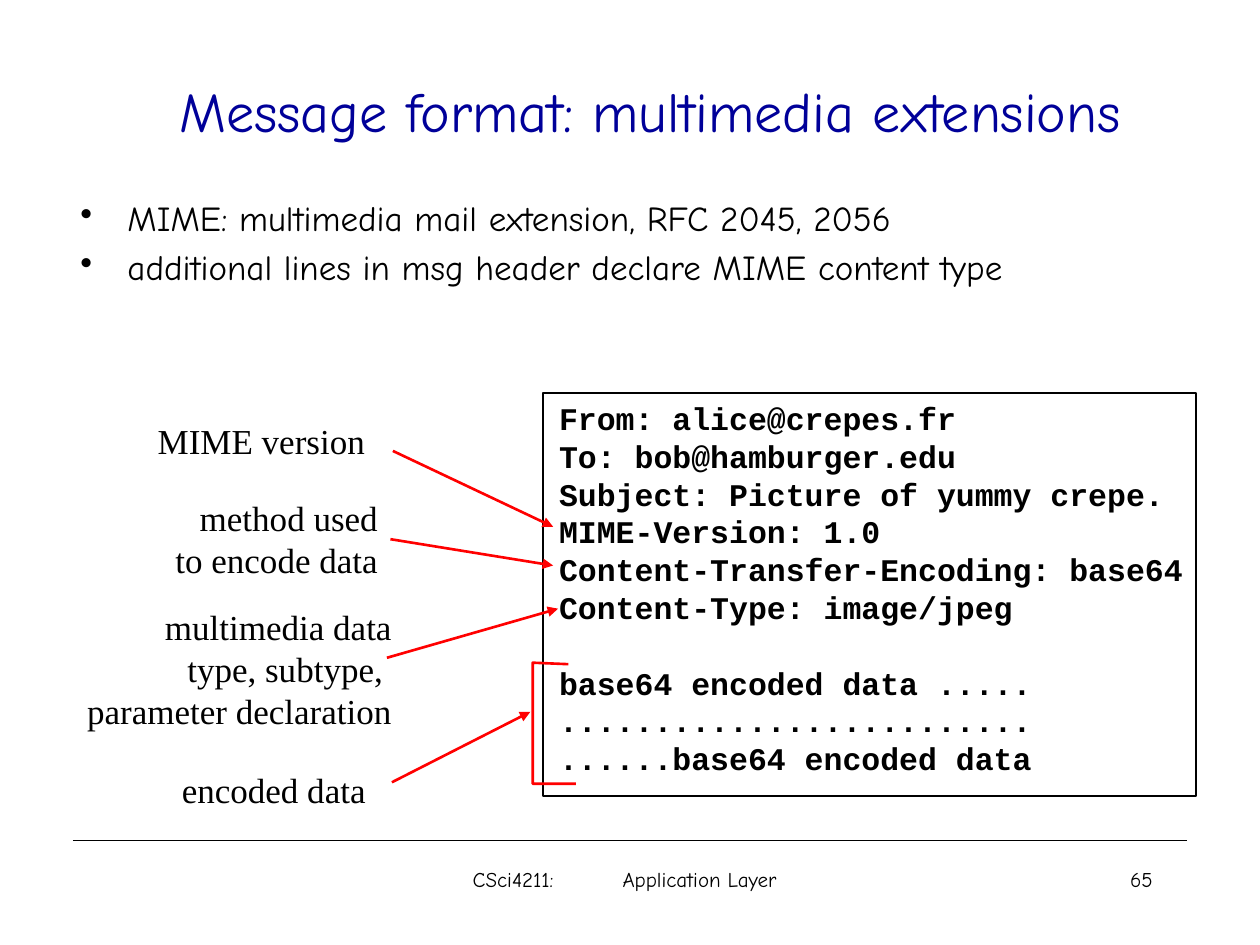
from lxml.etree import SubElement
from pptx import Presentation
from pptx.dml.color import RGBColor
from pptx.enum.shapes import MSO_CONNECTOR, MSO_SHAPE
from pptx.enum.text import MSO_ANCHOR, PP_ALIGN
from pptx.oxml.ns import qn
from pptx.util import Cm, Pt

BLACK = RGBColor(0x00, 0x00, 0x00)
NAVY = RGBColor(0x00, 0x00, 0x99)
RED = RGBColor(0xFF, 0x00, 0x00)

COMIC = "Comic Neue"
COURIER = "Courier New"
TIMES = "Times New Roman"

BULLETS = [
    "MIME: multimedia mail extension, RFC 2045, 2056",
    "additional lines in msg header declare MIME content type",
]
MAIL_HEADER = [
    "From: alice@crepes.fr",
    "To: bob@hamburger.edu",
    "Subject: Picture of yummy crepe.",
    "MIME-Version: 1.0",
    "Content-Transfer-Encoding: base64",
    "Content-Type: image/jpeg",
]
MAIL_BODY = [
    "base64 encoded data .....",
    ".........................",
    "......base64 encoded data",
]
# Each label: lines, box (left, top, width, height), alignment, arrow (x1, y1, x2, y2)
LABELS = [
    (["MIME version"], (2.69, 8.33, 5.16, 1.09), PP_ALIGN.CENTER,
     (7.92, 9.09, 11.15, 10.62)),
    (["method used", "to encode data"], (2.49, 9.88, 5.38, 1.96), PP_ALIGN.RIGHT,
     (7.87, 10.87, 11.15, 11.4)),
    (["multimedia data", "type, subtype, ", "parameter declaration"],
     (0.3, 12.09, 7.85, 2.79), PP_ALIGN.RIGHT, (7.8, 13.26, 11.25, 12.27)),
    (["encoded data"], (3.07, 15.37, 4.9, 1.09), PP_ALIGN.CENTER,
     (7.9, 15.77, 10.69, 14.35)),
]
BRACKET = [(11.46, 13.39), (10.74, 13.36), (10.74, 15.8), (11.61, 15.8)]


def add_text(slide, box, lines, font, size, color=BLACK, align=PP_ALIGN.LEFT,
             bold=False, wrap=True):
    """Add a text box with one paragraph per line and return its frame."""
    frame = slide.shapes.add_textbox(*map(Cm, box)).text_frame
    frame.word_wrap = wrap
    frame.text = "\n".join(lines)
    for paragraph in frame.paragraphs:
        paragraph.alignment = align
        paragraph.line_spacing = Pt(size * 1.2)
        paragraph.font.name = font
        paragraph.font.size = Pt(size)
        paragraph.font.bold = bold
        paragraph.font.color.rgb = color
    return frame


def add_bullet(paragraph, indent):
    properties = paragraph._p.get_or_add_pPr()
    properties.set("marL", str(indent))
    properties.set("indent", str(-indent))
    bullet = SubElement(properties, qn("a:buChar"))
    bullet.set("char", "•")
    properties.find(qn("a:defRPr")).addprevious(bullet)


def add_tab_stop(paragraph, position):
    properties = paragraph._p.get_or_add_pPr()
    tabs = SubElement(properties, qn("a:tabLst"))
    SubElement(tabs, qn("a:tab"), pos=str(position), algn="l")
    properties.find(qn("a:defRPr")).addprevious(tabs)


def add_line(slide, ends, color, width, arrow=False):
    line = slide.shapes.add_connector(MSO_CONNECTOR.STRAIGHT, *map(Cm, ends))
    line.line.color.rgb = color
    line.line.width = Pt(width)
    if arrow:
        SubElement(line.line._get_or_add_ln(), qn("a:tailEnd"), type="triangle")
    SubElement(line._element.spPr, qn("a:effectLst"))


def style_outline(shape, color, width):
    shape.shadow.inherit = False
    shape.fill.background()
    shape.line.color.rgb = color
    shape.line.width = Pt(width)


def add_bracket(slide, points):
    corners = [(Cm(x), Cm(y)) for x, y in points]
    builder = slide.shapes.build_freeform(*corners[0])
    builder.add_line_segments(corners[1:], close=False)
    style_outline(builder.convert_to_shape(), RED, 1.5)


def add_footer(slide):
    add_line(slide, (1.47, 16.94, 23.93, 16.94), BLACK, 0.75)
    course = add_text(slide, (8.46, 17.35, 8.26, 1.27),
                      ["CSci4211:\tApplication Layer"], COMIC, 12)
    course.margin_left = Cm(1.07)
    add_tab_stop(course.paragraphs[0], Cm(3.02))
    add_text(slide, (18.21, 17.35, 5.28, 1.27), ["65"], COMIC, 12,
             align=PP_ALIGN.RIGHT)


def add_mail(slide):
    frame = add_text(slide, (11.02, 7.92, 13.82, 8.64), MAIL_HEADER + MAIL_BODY,
                     COURIER, 18, bold=True)
    # One line of space between header and body
    frame.paragraphs[len(MAIL_HEADER)].space_before = Pt(21.6)
    border = slide.shapes.add_shape(
        MSO_SHAPE.RECTANGLE, Cm(10.95), Cm(7.92), Cm(13.16), Cm(8.13))
    style_outline(border, BLACK, 1)


def main():
    presentation = Presentation()
    presentation.slide_width = Cm(25.4)
    presentation.slide_height = Cm(19.05)
    slide = presentation.slides.add_slide(presentation.slide_layouts[6])

    add_footer(slide)

    # Title and bullets
    title = add_text(slide, (1.47, 0.64, 23.29, 3.18),
                     ["Message format: multimedia extensions"], COMIC, 32,
                     NAVY, PP_ALIGN.CENTER)
    title.vertical_anchor = MSO_ANCHOR.MIDDLE
    body = add_text(slide, (1.37, 3.84, 20.35, 12.9), BULLETS, COMIC, 20)
    for paragraph in body.paragraphs:
        paragraph.space_before = Pt(4)
        add_bullet(paragraph, Cm(0.95))

    # Mail message with its labels, arrows and bracket
    add_mail(slide)
    for lines, box, align, arrow in LABELS:
        add_text(slide, box, lines, TIMES, 20, align=align, wrap=False)
        add_line(slide, arrow, RED, 1.5, arrow=True)
    add_bracket(slide, BRACKET)

    presentation.save("out.pptx")


if __name__ == "__main__":
    main()
